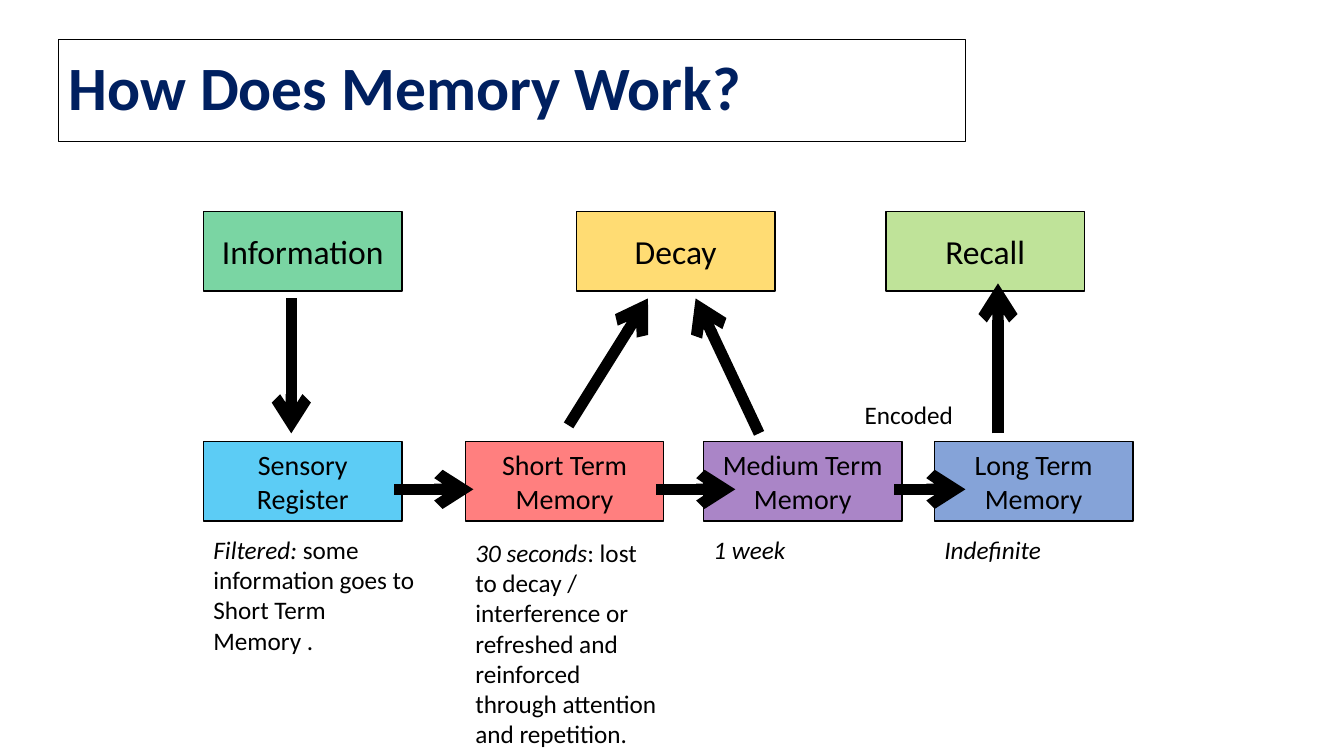
from lxml.etree import SubElement
from pptx import Presentation
from pptx.dml.color import RGBColor
from pptx.enum.shapes import MSO_CONNECTOR, MSO_SHAPE
from pptx.enum.text import MSO_ANCHOR, MSO_AUTO_SIZE, PP_ALIGN
from pptx.oxml.ns import qn
from pptx.util import Cm, Pt

STAGE_WIDTH, STAGE_HEIGHT, ROW_STEP = 5, 2, 5.8
BODY = {"name": "Calibri", "size": Pt(18)}
ITALIC = BODY | {"italic": True}
OUTCOME = BODY | {"size": Pt(24)}
STORE = BODY | {"size": Pt(20)}
HEADING = BODY | {"size": Pt(44), "bold": True}

OUTCOMES = [
    ("Information", 0, "00B050", 52),
    ("Decay", 9.4, "FFC000", 55),
    ("Recall", 17.2, "92D050", 58),
]
STORES = [
    ("Sensory Register", 0, "00B0F0", 64),
    ("Short Term Memory", 6.6, "FF0000", 50),
    ("Medium Term Memory", 12.6, "7030A0", 59),
    ("Long Term Memory", 18.42, "4472C4", 65),
]
ROW_ARROW_LENGTHS = [2, 2, 1.8]
UPRIGHT_ARROWS = [
    ((2.21, 2.19), (2.21, 5.59)),
    ((9.2, 5.39), (11.2, 2.19)),
    ((14, 5.59), (12.4, 2.19)),
    ((20.02, 5.59), (20.02, 1.81)),
]
NOTES = [
    ((0, 8.01, 5.59, 3.33),
     [("Filtered:", ITALIC), (" some information goes to Short Term Memory .", BODY)]),
    ((6.6, 8.08, 5.21, 5.64),
     [("30 seconds", ITALIC),
      (": lost to decay / interference or refreshed and reinforced "
       "through attention and repetition.", BODY)]),
    ((12.6, 8.01, 4.19, 1.02), [("1 week", ITALIC)]),
    ((18.42, 8.01, 5.59, 1.02), [("Indefinite", ITALIC)]),
    ((16.41, 4.6, 3.2, 1.02), [("Encoded", BODY)]),
]


def colour(value):
    """Turn a hex string into a colour."""
    return RGBColor.from_string(value)


def set_values(target, values):
    """Set every attribute named in a dict of format values."""
    for name, value in values.items():
        setattr(target, name, value)


def write(para, text, style, ink="000000"):
    """Add one styled span of text to a paragraph."""
    span = para.add_run()
    span.text = text
    set_values(span.font, style)
    span.font.color.rgb = colour(ink)


def outline(shape, width):
    """Give a shape a black outline."""
    shape.line.color.rgb = colour("000000")
    shape.line.width = Pt(width)


def add_title(page, left, top, width, height):
    """Place and format the title placeholder."""
    title = page.shapes.title
    set_values(title, {"left": Cm(left), "top": Cm(top),
                       "width": Cm(width), "height": Cm(height)})
    outline(title, 0.75)
    set_values(title.text_frame, {"vertical_anchor": MSO_ANCHOR.MIDDLE, "word_wrap": True})
    para = title.text_frame.paragraphs[0]
    set_values(para, {"alignment": PP_ALIGN.LEFT, "line_spacing": 0.9})
    write(para, "How Does Memory Work?", HEADING, "002060")


def add_stage(page, left, top, text, fill, opacity, style):
    """Draw one labelled, translucent stage of the memory model."""
    box = page.shapes.add_shape(MSO_SHAPE.RECTANGLE, Cm(left), Cm(top),
                                Cm(STAGE_WIDTH), Cm(STAGE_HEIGHT))
    box.shadow.inherit = False
    box.fill.solid()
    box.fill.fore_color.rgb = colour(fill)
    tint = box.fill._xPr.find(qn("a:solidFill"))[0]
    SubElement(tint, qn("a:alpha")).set("val", str(opacity * 1000))
    outline(box, 1)
    set_values(box.text_frame, {"vertical_anchor": MSO_ANCHOR.MIDDLE, "word_wrap": True})
    para = box.text_frame.paragraphs[0]
    para.alignment = PP_ALIGN.CENTER
    write(para, text, style)


def add_arrow(page, left, top, start, end):
    """Draw a heavy arrow between two points relative to a corner."""
    arrow = page.shapes.add_connector(
        MSO_CONNECTOR.STRAIGHT, Cm(left + start[0]), Cm(top + start[1]),
        Cm(left + end[0]), Cm(top + end[1]))
    outline(arrow, 8)
    SubElement(arrow.line._get_or_add_ln(), qn("a:tailEnd")).set("type", "arrow")
    SubElement(arrow._element.spPr, qn("a:effectLst"))


def add_note(page, left, top, width, height, spans):
    """Write a note made of styled spans."""
    note = page.shapes.add_textbox(Cm(left), Cm(top), Cm(width), Cm(height))
    set_values(note.text_frame, {"word_wrap": True,
                                 "auto_size": MSO_AUTO_SIZE.SHAPE_TO_FIT_TEXT})
    for text, style in spans:
        write(note.text_frame.paragraphs[0], text, style)


def add_memory_model(page, left, top):
    """Lay out both rows of stages, their arrows and their notes."""
    for row, (stages, style) in enumerate([(OUTCOMES, OUTCOME), (STORES, STORE)]):
        for text, offset, fill, opacity in stages:
            add_stage(page, left + offset, top + row * ROW_STEP, text, fill, opacity, style)
    arrow_y = ROW_STEP + 1.2
    for (_, offset, _, _), length in zip(STORES, ROW_ARROW_LENGTHS):
        start_x = offset + STAGE_WIDTH - 0.2
        add_arrow(page, left, top, (start_x, arrow_y), (start_x + length, arrow_y))
    for start, end in UPRIGHT_ARROWS:
        add_arrow(page, left, top, start, end)
    for (x, y, width, height), spans in NOTES:
        add_note(page, left + x, top + y, width, height, spans)


def main():
    """Build and save the deck."""
    deck = Presentation()
    set_values(deck, {"slide_width": Cm(33.87), "slide_height": Cm(19.05)})
    page = deck.slides.add_slide(deck.slide_layouts[5])
    add_title(page, 1.47, 0.99, 22.86, 2.57)
    add_memory_model(page, 5.13, 5.33)
    deck.save("out.pptx")


if __name__ == "__main__":
    main()
